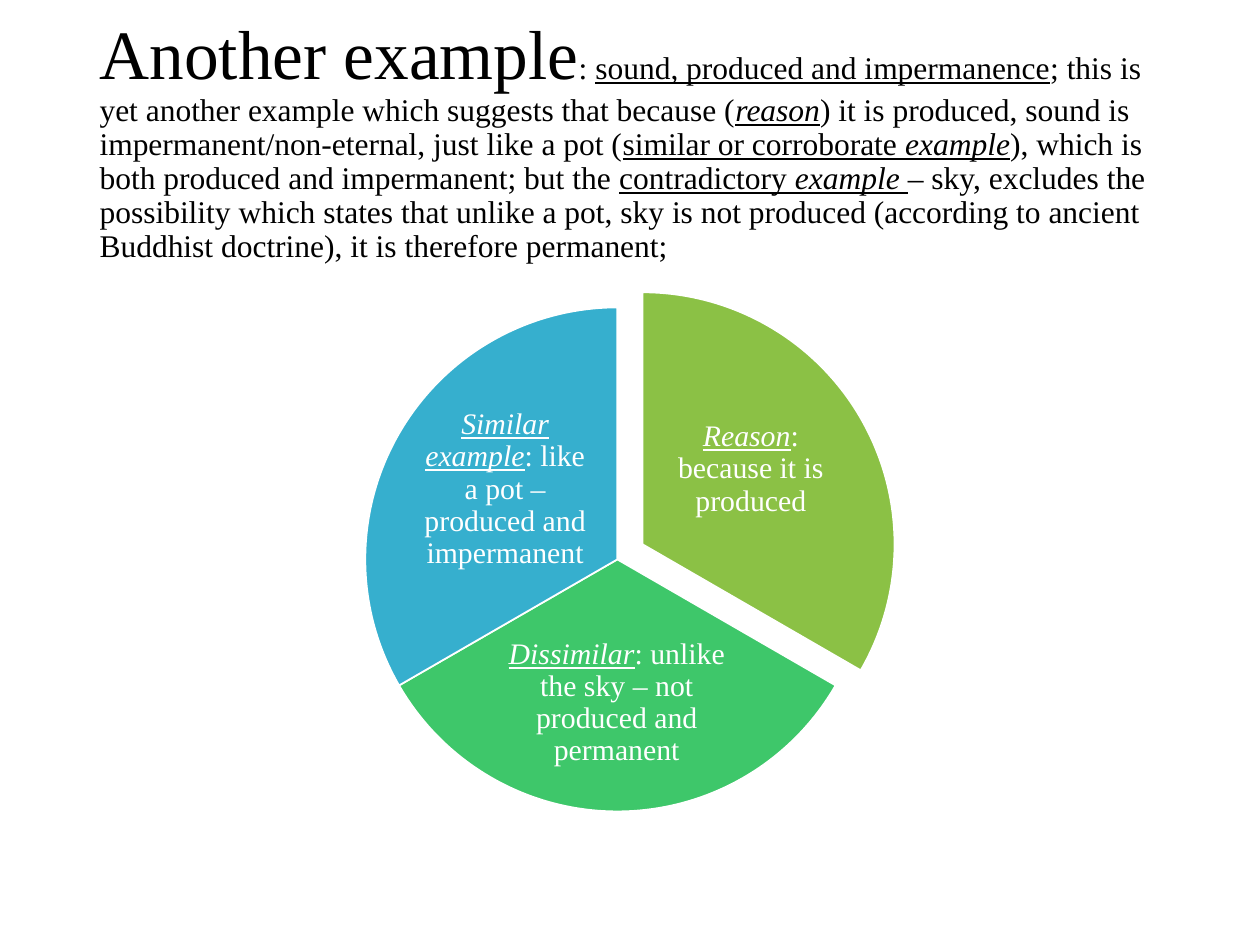
from dataclasses import dataclass

from pptx import Presentation
from pptx import util as u
from pptx.dml.color import RGBColor
from pptx.enum import shapes, text


@dataclass(frozen=True)
class Theme:
    font: str = "Times New Roman"
    ink: str = "000000"
    white: str = "FFFFFF"
    green: str = "8BC145"
    emerald: str = "3EC76A"
    blue: str = "36AFCE"
    heading_size: float = 39.6
    body_size: float = 18
    label_size: float = 17
    line_spacing: float = 0.9


class SlideBuilder:
    """Holds the theme and the slide being drawn."""

    def __init__(self, slide, theme):
        self.slide = slide
        self.theme = theme
        self.group = slide.shapes.add_group_shape()

    def fill_text(self, text_frame, runs, size, color, alignment):
        """Fill one paragraph from (text, style) pairs; style letters: i, u."""
        paragraph = text_frame.paragraphs[0]
        paragraph.alignment = alignment
        paragraph.line_spacing = self.theme.line_spacing
        paragraph.space_before = u.Pt(0)
        for words, style in runs:
            run = paragraph.add_run()
            run.text = words
            run.font.name = self.theme.font
            run.font.size = u.Pt(size)
            run.font.color.rgb = RGBColor.from_string(color)
            run.font.italic = "i" in style
            run.font.underline = "u" in style
        text_frame.word_wrap = True
        text_frame.auto_size = text.MSO_AUTO_SIZE.NONE
        text_frame.vertical_anchor = text.MSO_ANCHOR.MIDDLE

    def title(self, box, runs):
        title = self.slide.shapes.title
        title.left, title.top, title.width, title.height = map(u.Inches, box)
        self.fill_text(title.text_frame, runs, self.theme.body_size,
                       self.theme.ink, text.PP_ALIGN.LEFT)
        heading = title.text_frame.paragraphs[0].runs[0]
        heading.font.size = u.Pt(self.theme.heading_size)

    def sector(self, left, top, diameter, start, sweep, color):
        """Draw a pie sector; angles are degrees clockwise from the right."""
        box = map(u.Inches, (left, top, diameter, diameter))
        shape = self.group.shapes.add_shape(shapes.MSO_SHAPE.PIE, *box)
        shape.shadow.inherit = False
        for index, angle in enumerate((start, start + sweep)):
            # One degree is 60000 units, adjustments count in 100000
            shape.adjustments[index] = angle % 360 * 0.6
        shape.fill.solid()
        shape.fill.fore_color.rgb = RGBColor.from_string(color)
        shape.line.color.rgb = RGBColor.from_string(self.theme.white)
        shape.line.width = u.Pt(1)

    def label(self, box, term, explanation):
        shape = self.group.shapes.add_textbox(*map(u.Inches, box))
        frame = shape.text_frame
        frame.margin_left = frame.margin_right = u.Inches(0.02)
        frame.margin_top = frame.margin_bottom = u.Inches(0.02)
        self.fill_text(frame, [(term, "iu"), (explanation, "")],
                       self.theme.label_size, self.theme.white,
                       text.PP_ALIGN.CENTER)


TITLE_RUNS = [
    ("Another example", ""),
    (": ", ""),
    ("sound, produced and impermanence", "u"),
    ("; this is yet another example which suggests that because (", ""),
    ("reason", "iu"),
    (") it is produced, sound is impermanent/non-eternal, "
     "just like a pot (", ""),
    ("similar or corroborate ", "u"),
    ("example", "iu"),
    ("), which is both produced and impermanent; but the ", ""),
    ("contradictory ", "u"),
    ("example", "iu"),
    (" ", "u"),
    ("– sky, excludes the possibility which states that unlike a pot, "
     "sky is not produced (according to ancient Buddhist doctrine), "
     "it is therefore permanent;", ""),
]


def main():
    presentation = Presentation()
    presentation.slide_width = u.Inches(10)
    presentation.slide_height = u.Inches(7.5)
    theme = Theme()
    title_only = presentation.slide_layouts[5]
    builder = SlideBuilder(presentation.slides.add_slide(title_only), theme)

    # Title with the running explanation
    builder.title((0.69, 0.4, 8.62, 1.45), TITLE_RUNS)

    # Three equal sectors from twelve o'clock, the first one pulled out
    diameter, sweep = 4, 120
    sectors = [
        ((3.1, 2.32), theme.green, (5.28, 3.06, 1.36, 1.33),
         "Reason", ": because it is produced"),
        ((2.9, 2.44), theme.emerald, (3.99, 4.96, 1.81, 1.24),
         "Dissimilar", ": unlike the sky – not produced and permanent"),
        ((2.9, 2.44), theme.blue, (3.33, 3.22, 1.36, 1.33),
         "Similar example", ": like a pot – produced and impermanent"),
    ]
    for index, (corner, color, box, term, explanation) in enumerate(sectors):
        builder.sector(*corner, diameter, 270 + index * sweep, sweep, color)
        builder.label(box, term, explanation)

    presentation.save("out.pptx")


if __name__ == "__main__":
    main()
